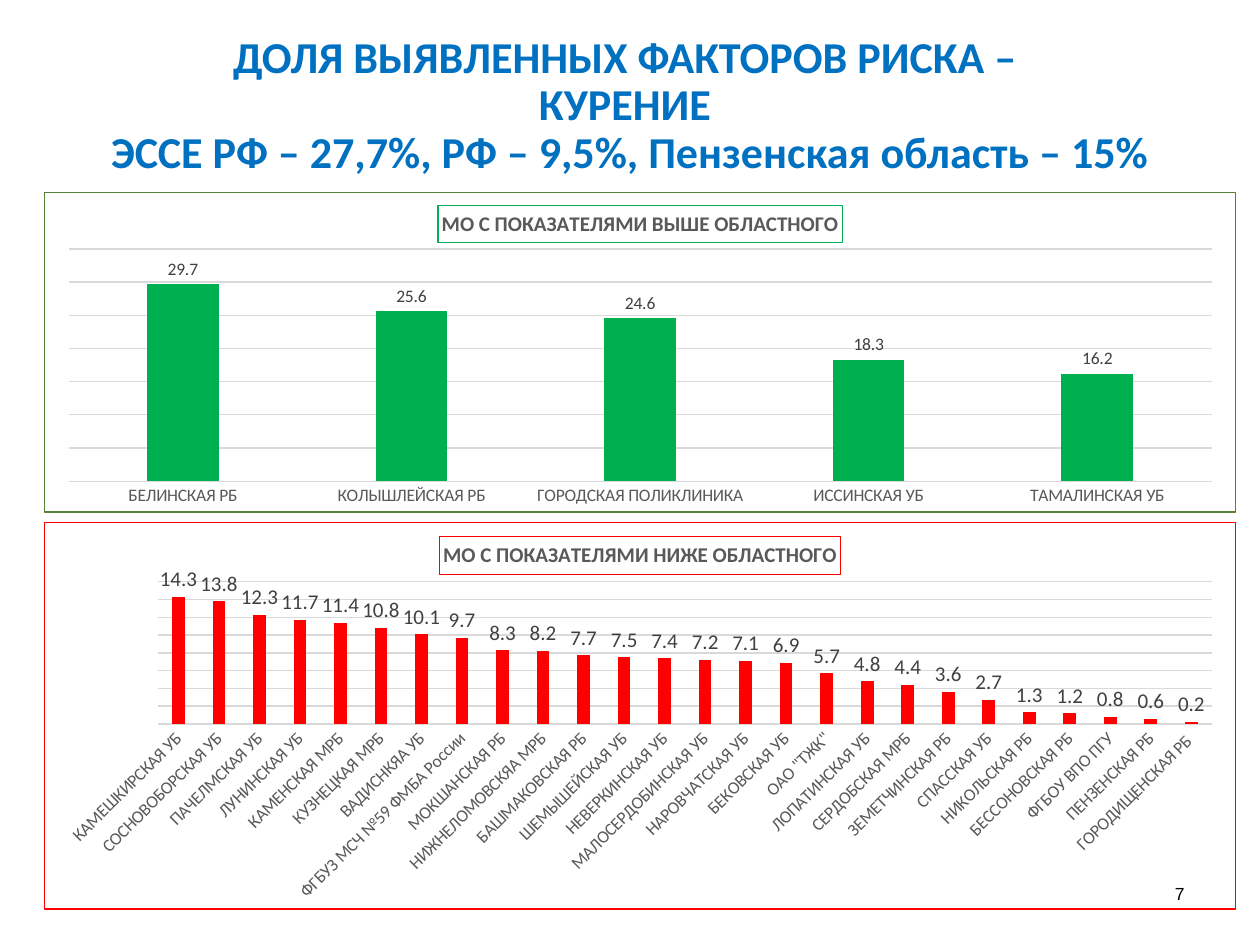
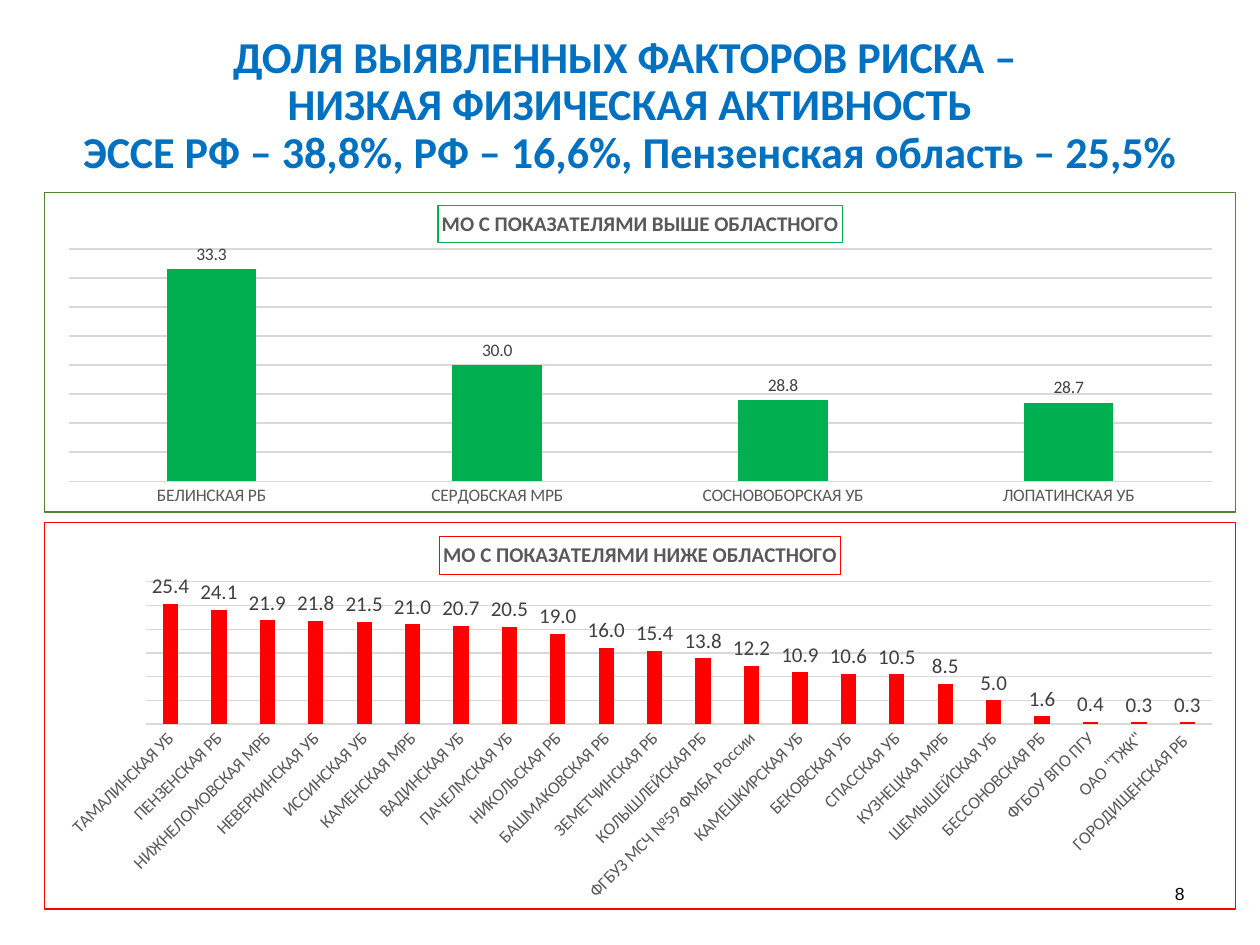
"""Build two slides that compare risk factor shares by medical organisation."""
from dataclasses import dataclass

from pptx import Presentation
from pptx.chart.data import CategoryChartData
from pptx.dml.color import RGBColor
from pptx.enum.chart import XL_CHART_TYPE, XL_LABEL_POSITION, XL_TICK_MARK
from pptx.enum.text import MSO_ANCHOR, MSO_AUTO_SIZE, PP_ALIGN
from pptx.oxml import parse_xml
from pptx.oxml.ns import nsdecls, qn
from pptx.util import Inches, Pt


@dataclass(frozen=True)
class Theme:
    title_color: str = "0070C0"
    number_color: str = "000000"
    axis_color: str = "595959"
    label_color: str = "404040"
    grid_color: str = "D9D9D9"
    above_color: str = "00B050"
    above_border: str = "548235"
    below_color: str = "FF0000"
    font: str = "Calibri"
    number_font: str = "Arial"
    title_size: float = 25.2
    heading_size: int = 12
    small_size: int = 10
    line_width: float = 0.75


@dataclass(frozen=True)
class Panel:
    heading: str
    top: float
    height: float
    color: str
    border: str
    label_size: int
    label_angle: int = 0


THEME = Theme()

ABOVE = Panel("МО С ПОКАЗАТЕЛЯМИ ВЫШЕ ОБЛАСТНОГО", 1.52, 2.55, THEME.above_color,
              THEME.above_border, THEME.small_size)
BELOW = Panel("МО С ПОКАЗАТЕЛЯМИ НИЖЕ ОБЛАСТНОГО", 4.14, 3.08, THEME.below_color,
              THEME.below_color, THEME.heading_size, -45)

SMOKING_ABOVE = {
    "БЕЛИНСКАЯ РБ": 29.7, "КОЛЫШЛЕЙСКАЯ РБ": 25.6, "ГОРОДСКАЯ ПОЛИКЛИНИКА": 24.6,
    "ИССИНСКАЯ УБ": 18.3, "ТАМАЛИНСКАЯ УБ": 16.2,
}
SMOKING_BELOW = {
    "КАМЕШКИРСКАЯ УБ": 14.3, "СОСНОВОБОРСКАЯ УБ": 13.8, "ПАЧЕЛМСКАЯ УБ": 12.3,
    "ЛУНИНСКАЯ УБ": 11.7, "КАМЕНСКАЯ МРБ": 11.4, "КУЗНЕЦКАЯ МРБ": 10.8,
    "ВАДИСНКЯА УБ": 10.1, "ФГБУЗ МСЧ №59 ФМБА России": 9.7, "МОКШАНСКАЯ РБ": 8.3,
    "НИЖНЕЛОМОВСКЯА МРБ": 8.2, "БАШМАКОВСКАЯ РБ": 7.7, "ШЕМЫШЕЙСКАЯ УБ": 7.5,
    "НЕВЕРКИНСКАЯ УБ": 7.4, "МАЛОСЕРДОБИНСКАЯ УБ": 7.2, "НАРОВЧАТСКАЯ УБ": 7.1,
    "БЕКОВСКАЯ УБ": 6.9, 'ОАО "ТЖК"': 5.7, "ЛОПАТИНСКАЯ УБ": 4.8,
    "СЕРДОБСКАЯ МРБ": 4.4, "ЗЕМЕТЧИНСКАЯ РБ": 3.6, "СПАССКАЯ УБ": 2.7,
    "НИКОЛЬСКАЯ РБ": 1.3, "БЕССОНОВСКАЯ РБ": 1.2, "ФГБОУ ВПО ПГУ": 0.8,
    "ПЕНЗЕНСКАЯ РБ": 0.6, "ГОРОДИЩЕНСКАЯ РБ ": 0.2,
}
ACTIVITY_ABOVE = {
    "БЕЛИНСКАЯ РБ": 33.3, "СЕРДОБСКАЯ МРБ": 30, "СОСНОВОБОРСКАЯ УБ": 28.8,
    "ЛОПАТИНСКАЯ УБ": 28.7,
}
ACTIVITY_BELOW = {
    "ТАМАЛИНСКАЯ УБ": 25.4, "ПЕНЗЕНСКАЯ РБ": 24.1, "НИЖНЕЛОМОВСКАЯ МРБ": 21.9,
    "НЕВЕРКИНСКАЯ УБ": 21.8, "ИССИНСКАЯ УБ": 21.5, "КАМЕНСКАЯ МРБ": 21,
    "ВАДИНСКАЯ УБ": 20.7, "ПАЧЕЛМСКАЯ УБ": 20.5, "НИКОЛЬСКАЯ РБ": 19,
    "БАШМАКОВСКАЯ РБ": 16, "ЗЕМЕТЧИНСКАЯ РБ": 15.4, "КОЛЫШЛЕЙСКАЯ РБ": 13.8,
    "ФГБУЗ МСЧ №59 ФМБА России": 12.2, "КАМЕШКИРСКАЯ УБ": 10.9, "БЕКОВСКАЯ УБ": 10.6,
    "СПАССКАЯ УБ": 10.5, "КУЗНЕЦКАЯ МРБ": 8.5, "ШЕМЫШЕЙСКАЯ УБ": 5,
    "БЕССОНОВСКАЯ РБ": 1.6, "ФГБОУ ВПО ПГУ": 0.4, 'ОАО "ТЖК"': 0.3,
    "ГОРОДИЩЕНСКАЯ РБ ": 0.3,
}


class SlideBuilder:
    def __init__(self, presentation, theme):
        self.presentation = presentation
        self.theme = theme
        self.slide = None

    def start_slide(self):
        layout = self.presentation.slide_layouts.get_by_name("Title Only")
        self.slide = self.presentation.slides.add_slide(layout)

    def format_font(self, font, size, color, bold=False, name=None):
        font.name = name or self.theme.font
        font.size = Pt(size)
        font.bold = bold
        font.color.rgb = RGBColor.from_string(color)

    def format_line(self, line, color):
        line.color.rgb = RGBColor.from_string(color)
        line.width = Pt(self.theme.line_width)

    def add_title(self, lines):
        title = self.slide.shapes.title
        title.left, title.top = Inches(0.5), Inches(0.3)
        title.width, title.height = Inches(9), Inches(1.09)
        frame = title.text_frame
        frame.text = "\v".join(lines)
        frame.word_wrap = True
        frame.auto_size = MSO_AUTO_SIZE.NONE
        frame.vertical_anchor = MSO_ANCHOR.MIDDLE
        paragraph = frame.paragraphs[0]
        paragraph.alignment = PP_ALIGN.CENTER
        paragraph.line_spacing = 0.9
        for run in paragraph.runs:
            self.format_font(run.font, self.theme.title_size, self.theme.title_color, True)

    def add_number(self, number):
        box = self.slide.shapes.add_textbox(Inches(7.17), Inches(6.83), Inches(2.33), Inches(0.52))
        frame = box.text_frame
        frame.text = str(number)
        frame.word_wrap = True
        frame.vertical_anchor = MSO_ANCHOR.MIDDLE
        paragraph = frame.paragraphs[0]
        paragraph.alignment = PP_ALIGN.RIGHT
        self.format_font(paragraph.runs[0].font, self.theme.small_size,
                         self.theme.number_color, name=self.theme.number_font)

    def add_chart(self, panel, shares, scale):
        data = CategoryChartData(number_format="0.0")
        data.categories = list(shares)
        data.add_series("Series 1", list(shares.values()))
        chart = self.slide.shapes.add_chart(
            XL_CHART_TYPE.COLUMN_CLUSTERED, Inches(0.35), Inches(panel.top),
            Inches(9.46), Inches(panel.height), data).chart
        self.format_font(chart.font, self.theme.small_size, self.theme.number_color)
        chart.has_legend = False
        self.frame_chart(chart, panel.border)
        self.add_heading(chart, panel)
        self.format_axes(chart, panel, scale)
        self.format_columns(chart.plots[0], panel)

    def frame_chart(self, chart, color):
        width = Pt(self.theme.line_width)
        chart.element.find(qn("c:chart")).addnext(parse_xml(
            f'<c:spPr {nsdecls("c", "a")}><a:noFill/><a:ln w="{width}"><a:solidFill>'
            f'<a:srgbClr val="{color}"/></a:solidFill></a:ln></c:spPr>'))

    def add_heading(self, chart, panel):
        heading = chart.chart_title
        heading.include_in_layout = False
        heading.text_frame.text = panel.heading
        run = heading.text_frame.paragraphs[0].runs[0]
        self.format_font(run.font, self.theme.heading_size, self.theme.axis_color, True)
        self.format_line(heading.format.line, panel.color)

    def format_axes(self, chart, panel, scale):
        category_axis = chart.category_axis
        category_axis.major_tick_mark = XL_TICK_MARK.NONE
        category_axis.has_major_gridlines = False
        self.format_line(category_axis.format.line, self.theme.grid_color)
        labels = category_axis.tick_labels
        self.format_font(labels.font, self.theme.small_size, self.theme.axis_color)
        body = category_axis._element.find(qn("c:txPr")).find(qn("a:bodyPr"))
        body.set("rot", str(panel.label_angle * 60000))
        value_axis = chart.value_axis
        value_axis.minimum_scale, value_axis.maximum_scale, value_axis.major_unit = scale
        value_axis.visible = False
        self.format_line(value_axis.major_gridlines.format.line, self.theme.grid_color)

    def format_columns(self, plot, panel):
        plot.vary_by_categories = False
        plot.gap_width = 219
        plot.overlap = -27
        fill = plot.series[0].format.fill
        fill.solid()
        fill.fore_color.rgb = RGBColor.from_string(panel.color)
        plot.has_data_labels = True
        labels = plot.data_labels
        labels.show_value = True
        labels.number_format = "0.0"
        labels.number_format_is_linked = False
        labels.position = XL_LABEL_POSITION.OUTSIDE_END
        self.format_font(labels.font, panel.label_size, self.theme.label_color)


SLIDES = [
    (7, ["КУРЕНИЕ ", "ЭССЕ РФ – 27,7%, РФ – 9,5%, Пензенская область – 15%"],
     [(ABOVE, SMOKING_ABOVE, (0, 35, 5)), (BELOW, SMOKING_BELOW, (0, 16, 2))]),
    (8, ["НИЗКАЯ ФИЗИЧЕСКАЯ АКТИВНОСТЬ",
         "ЭССЕ РФ – 38,8%, РФ – 16,6%, Пензенская область – 25,5%"],
     [(ABOVE, ACTIVITY_ABOVE, (26, 34, 1)), (BELOW, ACTIVITY_BELOW, (0, 30, 5))]),
]


def main():
    presentation = Presentation()
    presentation.slide_width, presentation.slide_height = Inches(10), Inches(7.5)
    builder = SlideBuilder(presentation, THEME)
    for number, title_lines, charts in SLIDES:
        builder.start_slide()
        builder.add_title(["ДОЛЯ ВЫЯВЛЕННЫХ ФАКТОРОВ РИСКА – ", *title_lines])
        builder.add_number(number)
        for chart in charts:
            builder.add_chart(*chart)
    presentation.save("out.pptx")


if __name__ == "__main__":
    main()
